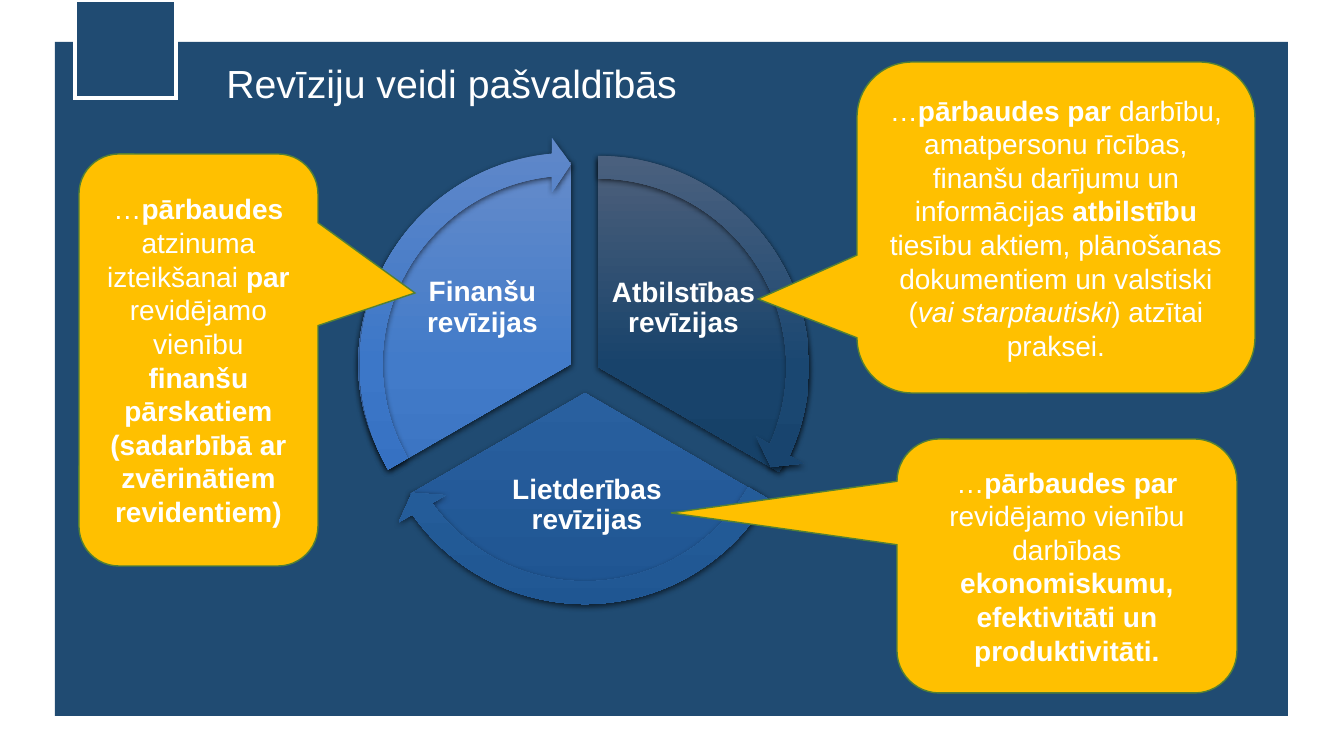
"""Builds the slide on audit types in municipalities."""
import lxml.etree
import pptx
import pptx.dml.color
import pptx.enum.shapes
import pptx.enum.text
import pptx.oxml.ns
import pptx.util

EMU_PER_PX = 914400 / 100.8
SHAPES = pptx.enum.shapes.MSO_SHAPE
FONT = "Arial"
NAVY, WHITE, AMBER, GREEN = "204B72", "FFFFFF", "FFC000", "538035"
TITLE = "Revīziju veidi pašvaldībās"
TITLE_BOX = (159, 54, 585, 57)
BACKDROP_BOX = (55, 42, 1233, 674)
CORNER_BOX = (75, 0, 101, 98)
RING_SIZE = 454

AUDITS = [
    {"label": "Atbilstības revīzijas", "label_box": (608, 249, 759, 368),
     "frame": (388, 157, 806, 576), "center": (598, 367), "start": (598, 157),
     "curves": [[(672, 157), (742, 198), (779, 262)],
                [(816, 327), (816, 407), (779, 472)]],
     "wedge_colors": ("4E607B", "18436B", "123C62"),
     "arrow_at": (371, 140), "arrow_angles": (14.72, 161.99),
     "arrow_colors": ("4E627F", "1A4771", "143F68")},
    {"label": "Lietderības revīzijas", "label_box": (482, 456, 692, 555),
     "frame": (383, 192, 786, 595), "center": (585, 393), "start": (759, 494),
     "curves": [[(724, 556), (656, 595), (585, 595)],
                [(513, 595), (446, 556), (410, 494)]],
     "wedge_colors": ("5474A7", "29609F", "1F5592"),
     "arrow_at": (358, 166), "arrow_angles": (86.72, 18),
     "arrow_colors": ("5475A7", "29619F", "1F5692")},
    {"label": "Finanšu revīzijas", "label_box": (410, 251, 555, 365),
     "frame": (358, 162, 782, 565), "center": (571, 364), "start": (389, 469),
     "curves": [[(348, 404), (348, 324), (389, 259)],
                [(427, 200), (496, 162), (571, 162)]],
     "wedge_colors": ("648BCA", "427BC9", "346CBA"),
     "arrow_at": (344, 137), "arrow_angles": (158.73, 90),
     "arrow_colors": ("6088C9", "3C77C8", "2E69B9")},
]

CALLOUTS = [
    ((79, 154, 239, 412), (415, 293), [
        ("…", ""), ("pārbaudes", "b"), (" atzinuma izteikšanai ", ""), ("par", "b"),
        (" revidējamo vienību ", ""),
        ("finanšu pārskatiem (sadarbībā ar zvērinātiem revidentiem)", "b")]),
    ((857, 62, 398, 331), (758, 299), [
        ("…", ""), ("pārbaudes par", "b"),
        (" darbību, amatpersonu rīcības, finanšu darījumu un informācijas ", ""),
        ("atbilstību", "b"),
        (" tiesību aktiem, plānošanas dokumentiem un valstiski (", ""),
        ("vai starptautiski", "i"), (") atzītai praksei.", "")]),
    ((897, 439, 340, 254), (671, 513), [
        ("…", ""), ("pārbaudes par", "b"), (" revidējamo vienību darbības ", ""),
        ("ekonomiskumu, efektivitāti un produktivitāti.", "b")]),
]


def px(length):
    return pptx.util.Emu(round(length * EMU_PER_PX))


def color(hex_string):
    return pptx.dml.color.RGBColor.from_string(hex_string)


def add_element(parent, tag, **attributes):
    return lxml.etree.SubElement(parent, pptx.oxml.ns.qn(tag), attributes)


def add_preset(slide, preset, box, fill=None, line=None, line_pt=1):
    shape = slide.shapes.add_shape(preset, *map(px, box))
    shape.shadow.inherit = False
    if fill:
        shape.fill.solid()
        shape.fill.fore_color.rgb = color(fill)
    if line:
        shape.line.color.rgb = color(line)
        shape.line.width = pptx.util.Pt(line_pt)
        outline = shape._element.spPr.find(pptx.oxml.ns.qn("a:ln"))
        add_element(outline, "a:miter", lim="800000")
    else:
        shape.line.fill.background()
    return shape


def write(shape, runs, size):
    frame = shape.text_frame
    frame.word_wrap = True
    paragraph = frame.paragraphs[0]
    paragraph.alignment = pptx.enum.text.PP_ALIGN.CENTER
    for text, style in runs:
        run = paragraph.add_run()
        run.text = text
        run.font.name = FONT
        run.font.size = pptx.util.Pt(size)
        run.font.color.rgb = color(WHITE)
        run.font.bold = style == "b"
        run.font.italic = style == "i"
    return paragraph


def shade(shape, colors):
    shape.line.fill.background()
    shape.fill.gradient()
    shape.fill.gradient_angle = 270
    properties = shape._element.spPr
    stops = properties.find(".//" + pptx.oxml.ns.qn("a:gsLst"))
    for stop in list(stops):
        stops.remove(stop)
    for position, stop_color in zip((0, 50000, 100000), colors):
        stop = add_element(stops, "a:gs", pos=str(position))
        add_element(stop, "a:srgbClr", val=stop_color)
    shape.shadow.inherit = False
    effects = properties.find(pptx.oxml.ns.qn("a:effectLst"))
    shadow = add_element(effects, "a:outerShdw", blurRad="57150", dist="19050",
                         dir="5400000", algn="ctr", rotWithShape="0")
    black = add_element(shadow, "a:srgbClr", val="000000")
    add_element(black, "a:alpha", val="63000")


def build_wedge(slide, audit):
    left, top, right, bottom = map(px, audit["frame"])
    corners = [tuple(map(px, curve[-1])) for curve in audit["curves"]]
    corners.append(tuple(map(px, audit["center"])))
    builder = slide.shapes.build_freeform(*map(px, audit["start"]))
    builder.add_line_segments(corners, close=True)
    builder.move_to(left, top)
    builder.move_to(right, bottom)
    wedge = builder.convert_to_shape()
    outline = wedge._element.spPr.find(".//" + pptx.oxml.ns.qn("a:path"))
    for frame_corner in outline[-2:]:
        outline.remove(frame_corner)
    sides = outline.findall(pptx.oxml.ns.qn("a:lnTo"))
    for side, curve in zip(sides, audit["curves"]):
        bend = add_element(outline, "a:cubicBezTo")
        for x, y in curve:
            add_element(bend, "a:pt", x=str(px(x) - left), y=str(px(y) - top))
        outline.replace(side, bend)
    return wedge


def add_wedge(slide, audit):
    wedge = build_wedge(slide, audit)
    shade(wedge, audit["wedge_colors"])
    left, top, right, bottom = map(px, audit["label_box"])
    frame = wedge.text_frame
    frame.margin_left = left - wedge.left
    frame.margin_top = top - wedge.top
    frame.margin_right = wedge.left + wedge.width - right
    frame.margin_bottom = wedge.top + wedge.height - bottom
    frame.vertical_anchor = pptx.enum.text.MSO_ANCHOR.MIDDLE
    write(wedge, [(audit["label"], "b")], 20).line_spacing = 0.9


def add_ring_arrow(slide, audit):
    arrow = add_preset(slide, SHAPES.CIRCULAR_ARROW,
                       (*audit["arrow_at"], RING_SIZE, RING_SIZE))
    for index, value in enumerate((0.05, 3.28, *audit["arrow_angles"], 0.06)):
        arrow.adjustments[index] = value
    shade(arrow, audit["arrow_colors"])


def add_callout(slide, box, tip, runs):
    left, top, width, height = box
    callout = add_preset(slide, SHAPES.ROUNDED_RECTANGULAR_CALLOUT, box, AMBER, GREEN)
    callout.adjustments[0] = (tip[0] - left) / width - 0.5
    callout.adjustments[1] = (tip[1] - top) / height - 0.5
    callout.adjustments[2] = 1 / 6
    write(callout, runs, 20)


def main():
    presentation = pptx.Presentation()
    presentation.slide_width, presentation.slide_height = px(1344), px(756)
    slide = presentation.slides.add_slide(presentation.slide_layouts[6])

    add_preset(slide, SHAPES.RECTANGLE, BACKDROP_BOX, NAVY)
    add_preset(slide, SHAPES.RECTANGLE, CORNER_BOX, NAVY, WHITE, 3)
    title = slide.shapes.add_textbox(*map(px, TITLE_BOX))
    write(title, [(TITLE, "")], 28)
    title.text_frame.auto_size = pptx.enum.text.MSO_AUTO_SIZE.SHAPE_TO_FIT_TEXT

    for audit in AUDITS:
        add_wedge(slide, audit)
    for audit in AUDITS:
        add_ring_arrow(slide, audit)
    for box, tip, runs in CALLOUTS:
        add_callout(slide, box, tip, runs)

    presentation.save("out.pptx")


if __name__ == "__main__":
    main()
